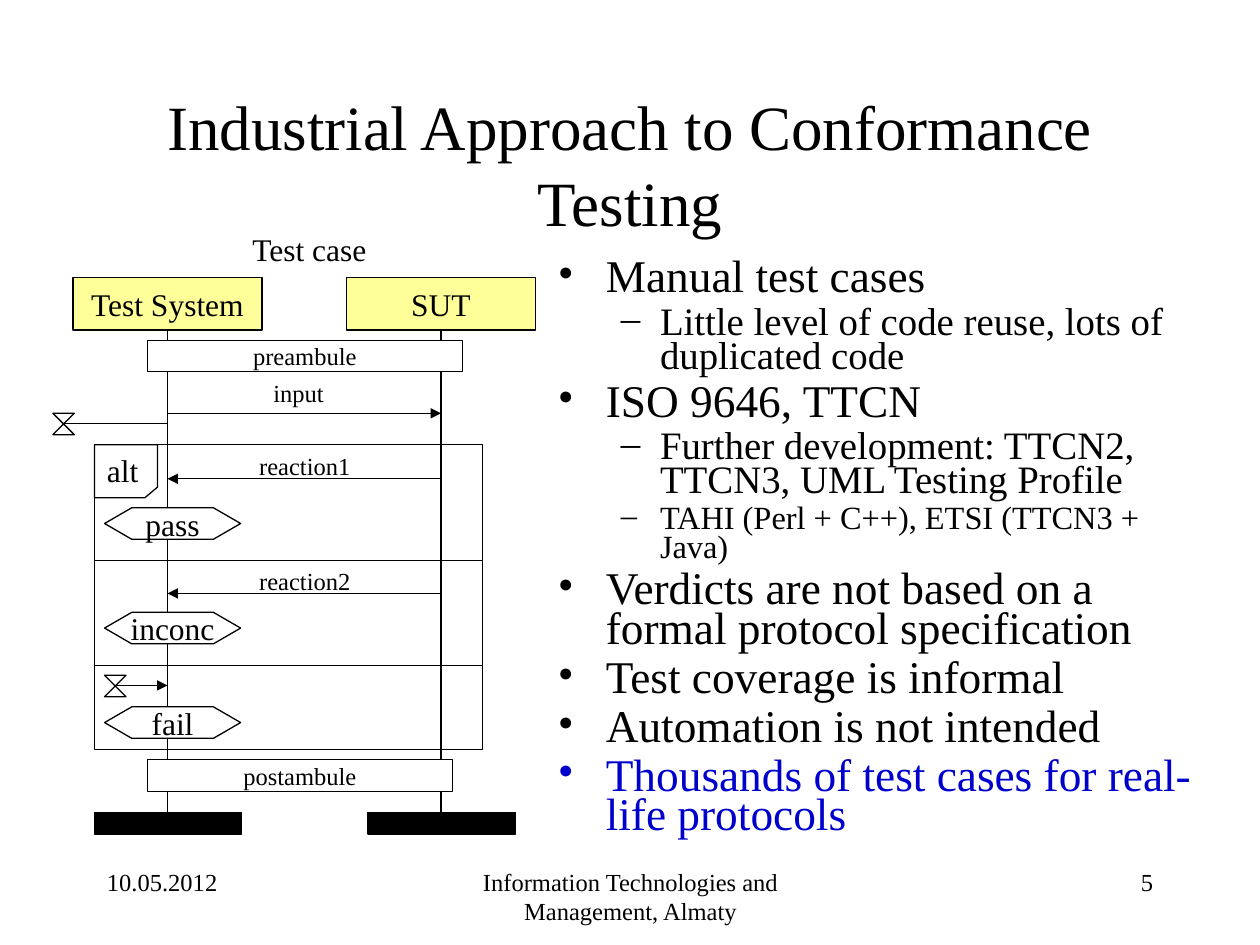
import pptx
import pptx.util
import pptx.dml.color
import pptx.enum.shapes
import pptx.enum.text
import pptx.oxml.ns
from lxml import etree

Inches = pptx.util.Inches
Pt = pptx.util.Pt
KIND = pptx.enum.shapes.MSO_SHAPE
ALIGN = pptx.enum.text.PP_ALIGN
ANCHOR = pptx.enum.text.MSO_ANCHOR
FONT = "Times New Roman"
BLACK, WHITE, YELLOW, BLUE = "000000", "FFFFFF", "FFFF99", "0000CC"
LEFT_LIFE, RIGHT_LIFE = 1.33, 3.5


def color(code):
    return pptx.dml.color.RGBColor.from_string(code)


def child(parent, tag, **attrs):
    return etree.SubElement(parent, pptx.oxml.ns.qn(tag), attrs)


def place(item, box):
    item.left, item.top, item.width, item.height = map(Inches, box)


def write(para, text, size, align=ALIGN.LEFT, ink=BLACK):
    para.alignment = align
    run = para.add_run()
    run.text = text
    run.font.size = Pt(size)
    run.font.name = FONT
    run.font.color.rgb = color(ink)


def label(slide, box, text, size=14, align=ALIGN.CENTER):
    frame = slide.shapes.add_textbox(*map(Inches, box)).text_frame
    frame.word_wrap = True
    write(frame.paragraphs[0], text, size, align)


def block(slide, kind, box, fill=WHITE, text="", size=18):
    shape = slide.shapes.add_shape(kind, *map(Inches, box))
    shape.shadow.inherit = False
    if fill:
        shape.fill.solid()
        shape.fill.fore_color.rgb = color(fill)
    else:
        shape.fill.background()
    shape.line.color.rgb = color(BLACK)
    shape.line.width = Pt(0.75)
    if text:
        frame = shape.text_frame
        frame.word_wrap = False
        frame.vertical_anchor = ANCHOR.MIDDLE
        write(frame.paragraphs[0], text, size, ALIGN.CENTER)
    return shape


def line(slide, start, end, arrow=False):
    link = slide.shapes.add_connector(
        pptx.enum.shapes.MSO_CONNECTOR.STRAIGHT, *map(Inches, start + end))
    link.line.color.rgb = color(BLACK)
    link.line.width = Pt(0.75)
    if arrow:
        child(link.line._get_or_add_ln(), "a:tailEnd", type="triangle")
    child(link._element.spPr, "a:effectLst")


def bullet(para, level):
    para.level = level
    indent, hang = [(0.38, 0.38), (0.81, 0.31)][level]
    props = para._p.get_or_add_pPr()
    props.set("marL", str(Inches(indent)))
    props.set("indent", str(-Inches(hang)))
    child(props, "a:buFont", typeface=FONT)
    child(props, "a:buChar", char="•–"[level])


def points(slide):
    items = [
        (0, "Manual test cases", 25.9, BLACK),
        (1, "Little level of code reuse, lots of duplicated code", 22.2, BLACK),
        (0, "ISO 9646, TTCN", 25.9, BLACK),
        (1, "Further development: TTCN2, TTCN3, UML Testing Profile", 22.2, BLACK),
        (1, "TAHI (Perl + C++), ETSI (TTCN3 + Java)", 18.5, BLACK),
        (0, "Verdicts are not based on a formal protocol specification", 25.9, BLACK),
        (0, "Test coverage is informal", 25.9, BLACK),
        (0, "Automation is not intended", 25.9, BLACK),
        (0, "Thousands of test cases for real-life protocols", 25.9, BLUE),
    ]
    frame = slide.shapes.add_textbox(*map(Inches, (4.33, 2.02, 5.25, 4.8))).text_frame
    frame.word_wrap = True
    for i, (level, text, size, ink) in enumerate(items):
        para = frame.add_paragraph() if i else frame.paragraphs[0]
        bullet(para, level)
        para.line_spacing = 0.73
        if i:
            para.space_before = Pt(round(size * 0.2, 1))
        write(para, text, size, ink=ink)


def chart(slide):
    label(slide, (1.33, 1.78, 2.25, 0.4), "Test case", 18)

    # Lifelines with their heads and feet
    for x, name in [(LEFT_LIFE, "Test System"), (RIGHT_LIFE, "SUT")]:
        line(slide, (x, 2.61), (x, 6.45))
        block(slide, KIND.RECTANGLE, (x - 0.75, 2.2, 1.5, 0.42), YELLOW, name)
        block(slide, KIND.RECTANGLE, (x - 0.58, 6.45, 1.17, 0.17), BLACK)

    # Frame of alternatives with its tag
    outer = block(slide, KIND.RECTANGLE, (0.75, 3.53, 3.08, 2.42), None, "alt")
    outer.text_frame.word_wrap = True
    outer.text_frame.vertical_anchor = ANCHOR.TOP
    outer.text_frame.paragraphs[0].alignment = ALIGN.LEFT
    tag = block(slide, KIND.FLOWCHART_CARD, (0.75, 3.53, 0.5, 0.42), None)
    tag.rotation = 180
    for y in (4.45, 5.28):
        line(slide, (0.75, y), (3.83, y))

    # Messages
    line(slide, (LEFT_LIFE, 3.28), (RIGHT_LIFE, 3.28), True)
    label(slide, (1.58, 2.95, 1.58, 0.33), "input")
    for y, text in [(3.8, "reaction1"), (4.71, "reaction2")]:
        line(slide, (RIGHT_LIFE, y), (LEFT_LIFE, y), True)
        label(slide, (1.67, y - 0.27, 1.5, 0.33), text)

    # Timers
    for x, y, arrow in [(0.42, 3.28, False), (0.83, 5.36, True)]:
        block(slide, KIND.FLOWCHART_COLLATE, (x, y, 0.17, 0.17))
        line(slide, (x + 0.08, y + 0.08), (LEFT_LIFE, y + 0.08), arrow)

    # Verdicts
    for y, text in [(4.03, "pass"), (4.86, "inconc"), (5.61, "fail")]:
        block(slide, KIND.FLOWCHART_PREPARATION, (0.83, y, 1.08, 0.25), text=text)

    # Opening and closing steps
    for y, wide, text in [(2.7, 2.5, "preambule"), (6.03, 2.42, "postambule")]:
        block(slide, KIND.RECTANGLE, (1.17, y, wide, 0.25), text=text, size=14)


def main():
    deck = pptx.Presentation()
    deck.slide_width, deck.slide_height = Inches(10), Inches(7.5)
    slide = deck.slides.add_slide(deck.slide_layouts[5])

    # Title
    title = slide.shapes.title
    place(title, (0.75, 0.67, 8.5, 1.25))
    title.text_frame.vertical_anchor = ANCHOR.MIDDLE
    write(title.text_frame.paragraphs[0],
          "Industrial Approach to Conformance Testing", 36, ALIGN.CENTER)

    points(slide)
    chart(slide)

    # Footer
    label(slide, (0.75, 6.83, 2.08, 0.5), "10.05.2012", align=ALIGN.LEFT)
    label(slide, (3.42, 6.83, 3.17, 0.5),
          "Information Technologies and Management, Almaty")
    label(slide, (7.17, 6.83, 2.08, 0.5), "5", align=ALIGN.RIGHT)
    deck.save("out.pptx")


if __name__ == "__main__":
    main()
